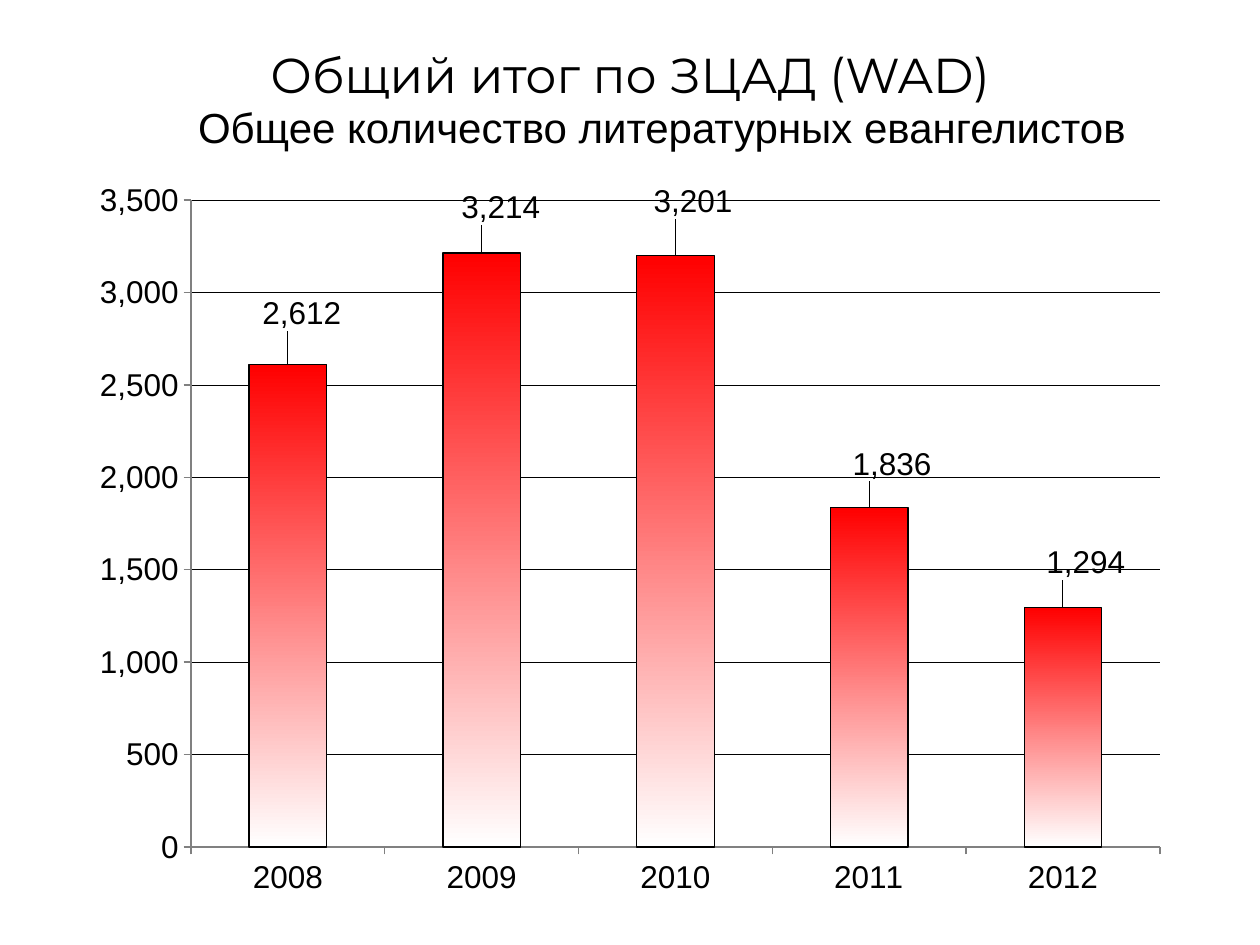
from lxml.etree import SubElement
from pptx import Presentation
from pptx.chart.data import CategoryChartData
from pptx.dml.color import RGBColor
from pptx.enum.chart import XL_CHART_TYPE, XL_LABEL_POSITION, XL_TICK_MARK
from pptx.enum.text import MSO_ANCHOR, PP_ALIGN
from pptx.oxml.ns import qn
from pptx.util import Pt

BLACK = RGBColor(0x00, 0x00, 0x00)
WHITE = RGBColor(0xFF, 0xFF, 0xFF)
RED = RGBColor(0xFF, 0x00, 0x00)
GRAY = RGBColor(0x80, 0x80, 0x80)

TITLE = "Общий итог по ЗЦАД (WAD)"
SUBTITLE = "Общее количество литературных евангелистов"
NUMBER_FORMAT = "#,##0"

# Year, number of evangelists, label shift as points right and down
EVANGELISTS = [
    ("2008", 2612, (8, -16)),
    ("2009", 3214, (11, -13)),
    ("2010", 3201, (10, -18)),
    ("2011", 1836, (13, -12)),
    ("2012", 1294, (13, -13)),
]

# Left, top, width, height in points
TITLE_BOX = (36, 21.6, 648, 90)
SUBTITLE_BOX = (102.2, 54.7, 552.2, 36)
CHART_BOX = (44.6, 95.8, 630.7, 423.4)
PLOT_BOX = (64.6, 18.6, 553.7, 369.6)  # within the chart


def write_line(shape, text, size, font_name):
    frame = shape.text_frame
    frame.word_wrap = True
    frame.vertical_anchor = MSO_ANCHOR.TOP
    paragraph = frame.paragraphs[0]
    paragraph.alignment = PP_ALIGN.CENTER
    run = paragraph.add_run()
    run.text = text
    run.font.size = Pt(size)
    run.font.name = font_name
    run.font.color.rgb = BLACK


def add_layout(parent, position, **settings):
    """Put a manual layout with the given settings into a chart element."""
    for old_layout in parent.findall(qn("c:layout")):
        parent.remove(old_layout)
    layout = SubElement(parent, qn("c:layout"))
    manual = SubElement(layout, qn("c:manualLayout"))
    for name, value in settings.items():
        SubElement(manual, qn(f"c:{name}")).set("val", str(value))
    parent.insert(position, layout)


def format_axis(axis):
    axis.major_tick_mark = XL_TICK_MARK.OUTSIDE
    axis.minor_tick_mark = XL_TICK_MARK.NONE
    axis.format.line.color.rgb = GRAY
    axis.format.line.width = Pt(0.75)
    axis.tick_labels.font.size = Pt(18)


def format_columns(series, chart_width, chart_height):
    fill = series.format.fill
    fill.gradient()
    fill.gradient_angle = 270
    for stop, color in zip(fill.gradient_stops, (RED, WHITE)):
        stop.color.rgb = color
    series.format.line.color.rgb = BLACK
    series.format.line.width = Pt(0.75)
    labels = series.data_labels
    labels.show_value = True
    labels.number_format = NUMBER_FORMAT
    labels.number_format_is_linked = False
    for index, (_, _, (right, down)) in enumerate(EVANGELISTS):
        label = series.points[index].data_label
        label.font.size = Pt(18)
        label.position = XL_LABEL_POSITION.OUTSIDE_END
    for label_element, (_, _, (right, down)) in zip(
            labels._element.findall(qn("c:dLbl")), EVANGELISTS):
        add_layout(label_element, 1, x=round(right / chart_width, 4),
                   y=round(down / chart_height, 4))


def add_column_chart(slide):
    data = CategoryChartData(number_format=NUMBER_FORMAT)
    data.categories = [year for year, _, _ in EVANGELISTS]
    data.add_series("Series 1", [count for _, count, _ in EVANGELISTS])
    chart = slide.shapes.add_chart(
        XL_CHART_TYPE.COLUMN_CLUSTERED, *map(Pt, CHART_BOX), data).chart
    chart.has_legend = False
    chart.has_title = False
    chart.font.name = "Arial"
    chart.font.size = Pt(18)
    chart.font.color.rgb = BLACK

    _, _, chart_width, chart_height = CHART_BOX
    left, top, width, height = PLOT_BOX
    plot_area = chart._chartSpace.chart.plotArea
    add_layout(plot_area, 0, layoutTarget="inner", xMode="edge", yMode="edge",
               x=round(left / chart_width, 4), y=round(top / chart_height, 4),
               w=round(width / chart_width, 4), h=round(height / chart_height, 4))

    format_axis(chart.category_axis)
    value_axis = chart.value_axis
    format_axis(value_axis)
    value_axis.minimum_scale = 0
    value_axis.maximum_scale = 3500
    value_axis.major_unit = 500
    value_axis.tick_labels.number_format = NUMBER_FORMAT
    value_axis.tick_labels.number_format_is_linked = False
    value_axis.has_major_gridlines = True
    value_axis.major_gridlines.format.line.color.rgb = BLACK
    value_axis.major_gridlines.format.line.width = Pt(0.25)

    plot = chart.plots[0]
    plot.gap_width = 150
    plot.vary_by_categories = False
    format_columns(plot.series[0], chart_width, chart_height)


def main():
    presentation = Presentation()
    presentation.slide_width = Pt(720)
    presentation.slide_height = Pt(540)
    slide = presentation.slides.add_slide(presentation.slide_layouts[5])
    add_column_chart(slide)

    title = slide.shapes.title
    title.left, title.top, title.width, title.height = map(Pt, TITLE_BOX)
    write_line(title, TITLE, 28, "Montserrat")
    subtitle = slide.shapes.add_textbox(*map(Pt, SUBTITLE_BOX))
    write_line(subtitle, SUBTITLE, 24, "Arial")
    presentation.save("out.pptx")


if __name__ == "__main__":
    main()
